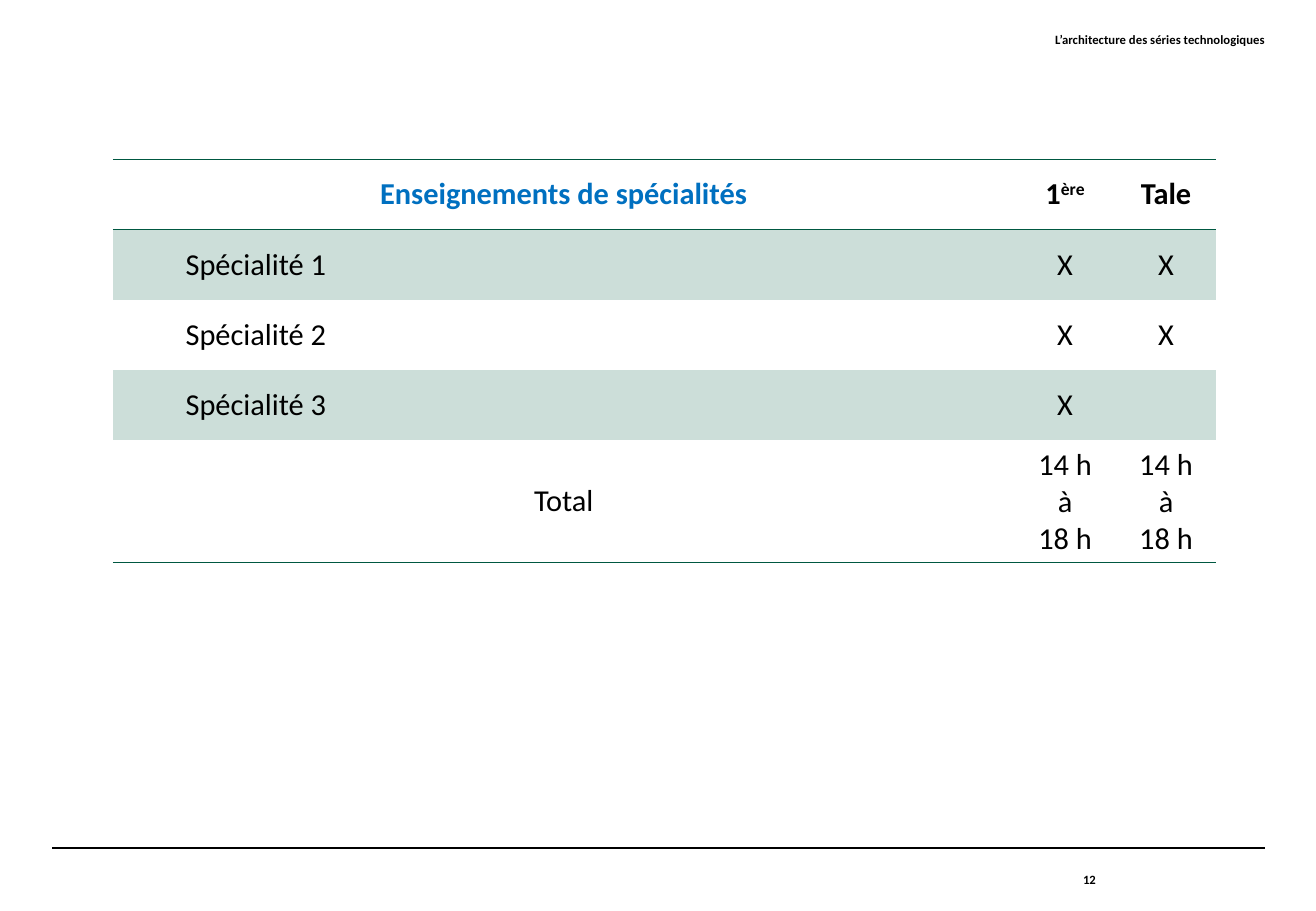
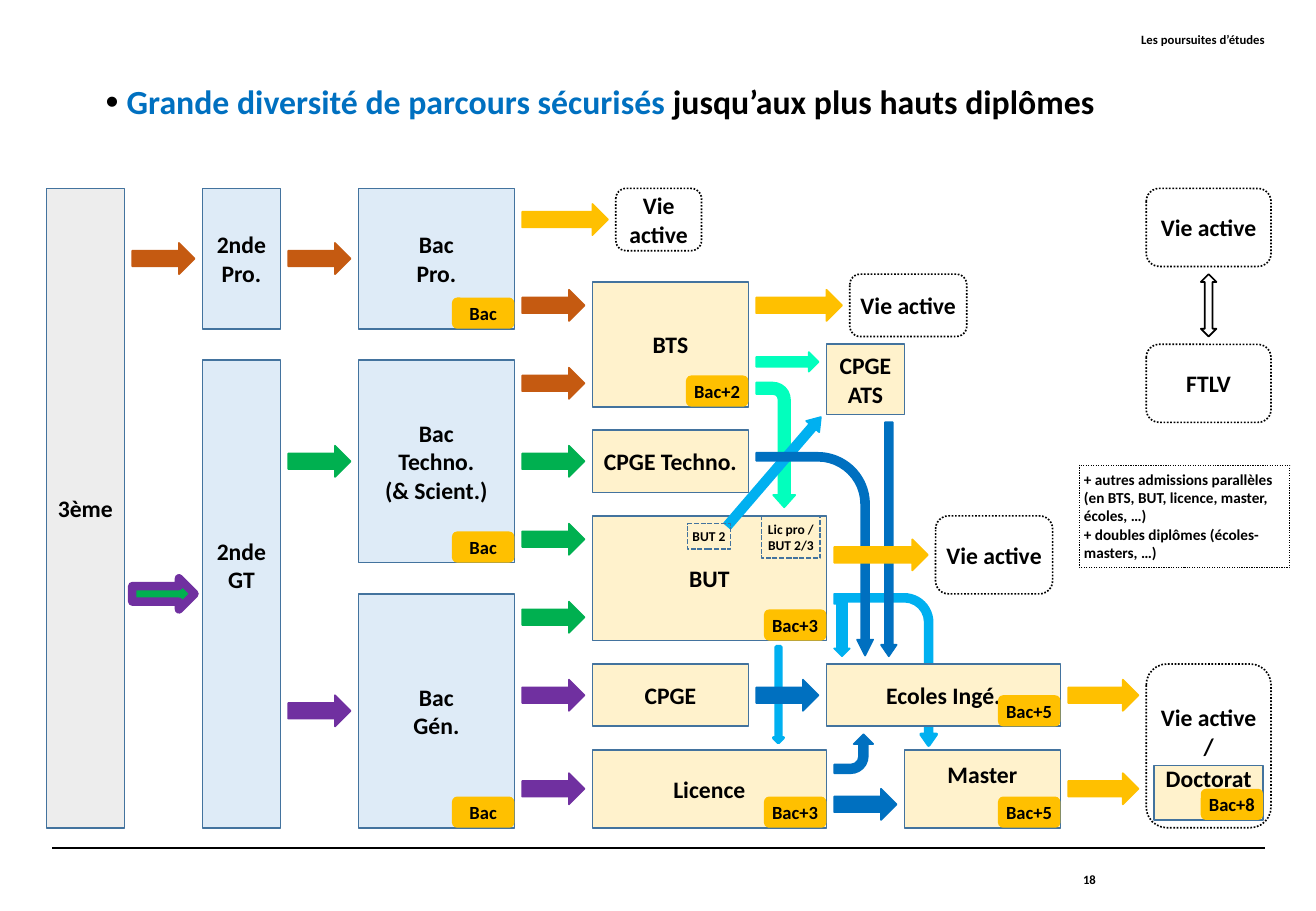
from dataclasses import dataclass

from lxml.etree import SubElement
from pptx import Presentation
from pptx.dml.color import RGBColor
from pptx.enum.dml import MSO_LINE
from pptx.enum.shapes import MSO_CONNECTOR, MSO_SHAPE
from pptx.enum.text import MSO_ANCHOR, PP_ALIGN
from pptx.oxml.ns import qn
from pptx.util import Cm, Pt

FONT = "Calibri"
COLORS = {
    "black": "000000", "white": "FFFFFF", "title": "0070C0",
    "rule": "005841", "band": "CCDED9",
    "college": "EDEDED", "lycee": "DEEBF7", "superior": "FFF2CC", "outline": "43739E",
    "pro": "C55A11", "techno": "00B050", "general": "7030A0", "work": "FFC000",
    "bts": "02FFBD", "but": "00B0F0", "prepa": "0070C0",
}
PLAIN_TABLE_STYLE = "{2D5ABB26-0587-4C30-8999-92F81FD0307C}"
INSET = 0.1
LINE_HEIGHT = 0.6
GRID_COLUMNS = 157


def rgb(name):
    return RGBColor.from_string(COLORS[name])


def style_run(run, size, color="black", bold=True):
    run.font.name, run.font.size, run.font.bold = FONT, Pt(size), bold
    run.font.color.rgb = rgb(color)


def write(frame, text, size, align=PP_ALIGN.CENTER, color="black", bold=True):
    frame.text = text
    for paragraph in frame.paragraphs:
        paragraph.alignment = align
        for run in paragraph.runs:
            style_run(run, size, color, bold)


def set_insets(frame, inset, bottom=None):
    frame.margin_left = frame.margin_right = frame.margin_top = Cm(inset)
    frame.margin_bottom = Cm(inset if bottom is None else bottom)


def add_label(slide, text, left, top, width, height, anchor):
    frame = slide.shapes.add_textbox(Cm(left), Cm(top), Cm(width), Cm(height)).text_frame
    frame.word_wrap = True
    frame.vertical_anchor = anchor
    set_insets(frame, 0)
    write(frame, text, 7.5, PP_ALIGN.RIGHT)


def add_page(prs, heading, number):
    """Add a slide with the running heading, the bottom rule and the page number."""
    slide = prs.slides.add_slide(prs.slide_layouts[6])
    rule = slide.shapes.add_connector(
        MSO_CONNECTOR.STRAIGHT, Cm(1.09), Cm(17.73), Cm(26.44), Cm(17.73))
    rule.line.color.rgb, rule.line.width = rgb("black"), Pt(0.8)
    SubElement(rule._element.spPr, qn("a:effectLst"))
    add_label(slide, heading, 9.96, 0.66, 16.48, 1.32, MSO_ANCHOR.TOP)
    add_label(slide, str(number), 18.85, 17.73, 4.06, 1.32, MSO_ANCHOR.MIDDLE)
    return slide


def add_border(cell, side):
    line = SubElement(cell._tc.get_or_add_tcPr(), qn(f"a:{side}"), w=str(Pt(1)))
    fill = SubElement(line, qn("a:solidFill"))
    SubElement(fill, qn("a:srgbClr"), val=COLORS["rule"])


def add_specialities(slide, left, top, width):
    hours = "14 h\nà\n18 h"
    rows = [
        ("Enseignements de spécialités", "1", "Tale"),
        ("Spécialité 1", "X", "X"),
        ("Spécialité 2", "X", "X"),
        ("Spécialité 3", "X", ""),
        ("Total", hours, hours),
    ]
    year_width, row_height, total_height = 2.11, 1.47, 2.55
    last = len(rows) - 1
    frame = slide.shapes.add_table(len(rows), 3, Cm(left), Cm(top), Cm(width),
                                   Cm(last * row_height + total_height))
    table = frame.table
    table.first_row = table.horz_banding = False
    table._tbl.tblPr.find(qn("a:tableStyleId")).text = PLAIN_TABLE_STYLE
    for column, size in zip(table.columns, (width - 2 * year_width, year_width, year_width)):
        column.width = Cm(size)
    for r, texts in enumerate(rows):
        table.rows[r].height = Cm(total_height if r == last else row_height)
        for c, text in enumerate(texts):
            cell = table.cell(r, c)
            speciality = c == 0 and 0 < r < last
            cell.vertical_anchor = MSO_ANCHOR.MIDDLE
            if speciality:
                cell.margin_left = Cm(1.52)
            write(cell.text_frame, text, 18,
                  PP_ALIGN.LEFT if speciality else PP_ALIGN.CENTER,
                  "title" if r == c == 0 else "black", bold=r == 0)
            if r == 0:
                add_border(cell, "lnT")
            if r in (0, last):
                add_border(cell, "lnB")
            if r % 2:
                cell.fill.solid()
                cell.fill.fore_color.rgb = rgb("band")
            else:
                cell.fill.background()
    ordinal = table.cell(0, 1).text_frame.paragraphs[0].add_run()
    ordinal.text = "ère"
    style_run(ordinal, 18)
    ordinal.font._element.set("baseline", "30000")


def add_title(slide, left, top, width, height):
    frame = slide.shapes.add_textbox(Cm(left), Cm(top), Cm(width), Cm(height)).text_frame
    frame.word_wrap = True
    paragraph = frame.paragraphs[0]
    properties = paragraph._p.get_or_add_pPr()
    properties.set("marL", str(Cm(1.43)))
    properties.set("indent", str(Cm(-0.44)))
    bullet_color = SubElement(properties, qn("a:buClr"))
    SubElement(bullet_color, qn("a:srgbClr"), val=COLORS["black"])
    SubElement(properties, qn("a:buSzPct"), val="110000")
    SubElement(properties, qn("a:buFont"), typeface="Arial")
    SubElement(properties, qn("a:buChar"), char="•")
    for text, color in (("Grande diversité de parcours sécurisés ", "title"),
                        ("jusqu’aux plus hauts diplômes", "black")):
        run = paragraph.add_run()
        run.text = text
        style_run(run, 20, color)


@dataclass
class Pathways:
    """A diagram whose parts are placed in grid units from its top left corner."""
    slide: object
    left: float
    top: float
    width: float

    def shape(self, kind, x, y, w, h, fill=None, line=None, weight=1, dash=None):
        unit = self.width / GRID_COLUMNS
        shape = self.slide.shapes.add_shape(
            kind, Cm(self.left + x * unit), Cm(self.top + y * unit), Cm(w * unit), Cm(h * unit))
        shape.shadow.inherit = False
        if fill:
            shape.fill.solid()
            shape.fill.fore_color.rgb = rgb(fill)
        else:
            shape.fill.background()
        if line:
            shape.line.color.rgb, shape.line.width = rgb(line), Pt(weight)
            if dash:
                shape.line.dash_style = dash
        else:
            shape.line.fill.background()
        return shape

    def text(self, shape, text, size=14, raised=0):
        """Centre the text; raised lifts it by that many half lines."""
        frame = shape.text_frame
        frame.word_wrap = False
        frame.vertical_anchor = MSO_ANCHOR.MIDDLE
        set_insets(frame, INSET, INSET + raised * LINE_HEIGHT)
        write(frame, text, size)

    def stage(self, text, x, y, w, h, fill="superior", badge=None, raised=0):
        """Add a level of study, with its diploma in the bottom right corner."""
        box = self.shape(MSO_SHAPE.RECTANGLE, x, y, w, h, fill, "outline")
        self.text(box, text, raised=raised)
        if badge:
            diploma = self.shape(MSO_SHAPE.ROUNDED_RECTANGLE, x + w - 8, y + h - 4, 8, 4, "work")
            self.text(diploma, badge, 11)

    def outcome(self, text, x, y, w, h, raised=0):
        box = self.shape(MSO_SHAPE.ROUNDED_RECTANGLE, x, y, w, h,
                         line="black", dash=MSO_LINE.ROUND_DOT)
        self.text(box, text, raised=raised)

    def arrow(self, color, x, y, w=8, h=4, kind=MSO_SHAPE.RIGHT_ARROW, turn=0, flip="",
              adjust=(), line=None, weight=1):
        arrow = self.shape(kind, x, y, w, h, color, line or color, weight)
        arrow.rotation = turn
        for i, value in enumerate(adjust):
            arrow.adjustments[i] = value
        for axis in flip:
            arrow._element.spPr.find(qn("a:xfrm")).set(f"flip{axis}", "1")

    def bent(self, color, x, y, w, h, turn, flip, adjust, weight=1):
        self.arrow(color, x, y, w, h, MSO_SHAPE.BENT_ARROW, turn, flip, adjust, weight=weight)

    def note(self, text, x, y, w, h, size, line, dash, wrap=False, weight=1):
        box = self.shape(MSO_SHAPE.RECTANGLE, x, y, w, h, line=line, weight=weight, dash=dash)
        frame = box.text_frame
        frame.word_wrap = wrap
        frame.vertical_anchor = MSO_ANCHOR.TOP
        set_insets(frame, INSET)
        write(frame, text, size, PP_ALIGN.LEFT if wrap else PP_ALIGN.CENTER)


def draw_arrows_behind(paths):
    paths.bent("but", 98.3, 55.6, 19.3, 12.3, 270, "HV", (0.064, 0.08, 0.114, 0.287), 2)
    paths.arrow("but", 87.7, 64.3, 12.3, 1.25, turn=90, weight=2)
    paths.bent("bts", 85.5, 30.4, 16, 5, 90, "", (0.294, 0.283, 0.316, 0.438))


def draw_stages(paths):
    paths.stage("3ème", 0, 0, 10, 82, "college")
    paths.stage("2nde\nPro.", 20, 0, 10, 18, "lycee")
    paths.stage("2nde\nGT", 20, 22, 10, 60, "lycee", raised=2)
    paths.stage("Bac\nPro.", 40, 0, 20, 18, "lycee", "Bac")
    paths.stage("Bac\nTechno.\n(& Scient.)", 40, 22, 20, 26, "lycee", "Bac")
    paths.stage("Bac\nGén.", 40, 52, 20, 30, "lycee", "Bac")
    paths.stage("BTS", 70, 12, 20, 16, badge="Bac+2")
    paths.stage("CPGE Techno.", 70, 31, 20, 8)
    paths.stage("BUT", 70, 42, 30, 16, badge="Bac+3")
    paths.stage("CPGE", 70, 61, 20, 8)
    paths.stage("Licence", 70, 72, 30, 10, badge="Bac+3")
    paths.stage("CPGE\nATS", 100, 20, 10, 9)
    paths.stage("Ecoles Ingé.", 100, 61, 30, 8, badge="Bac+5")
    paths.stage("Master", 110, 72, 20, 10, badge="Bac+5", raised=1)


def draw_arrows_in_front(paths):
    paths.arrow("but", 84.1, 35.2, 18.4, 2.2, turn=310.7, adjust=(0.5, 0.731))
    paths.arrow("techno", 11, 50, line="general", weight=5)
    for color, places in {
        "pro": [(11, 7), (31, 7), (61, 13), (61, 23)],
        "techno": [(31, 33), (61, 33), (61, 43), (61, 53)],
        "general": [(31, 65), (61, 63), (61, 75)],
        "prepa": [(91, 63), (101, 77)],
    }.items():
        for x, y in places:
            paths.arrow(color, x, y)
    paths.arrow("bts", 91, 21, h=2.5)
    paths.bent("prepa", 101, 70, 5, 5, 90, "H", (0.224, 0.25, 0.25, 0.438))
    paths.bent("but", 98, 55, 8, 2, 270, "HV", (0.644, 0.5, 0.5, 0.296))
    paths.bent("prepa", 85.5, 39.4, 26, 15, 270, "HV", (0.068, 0.069, 0.136, 0.438))
    paths.arrow("prepa", 93, 44, 30, 2, turn=90, adjust=(0.5, 0.731))
    for x, y, w in ((61, 2, 11), (91, 13, 11), (101, 45, 12), (131, 63, 9), (131, 75, 9)):
        paths.arrow("work", x, y, w)
    paths.arrow("white", 145, 14, 8, 2, MSO_SHAPE.LEFT_RIGHT_ARROW, 90, line="black")


def draw_outcomes(paths):
    paths.outcome("Vie\nactive", 73, 0, 11, 8)
    paths.outcome("Vie active", 103, 11, 15, 8)
    paths.outcome("Vie active", 114, 42, 15, 10)
    paths.outcome("Vie active", 141, 0, 16, 10)
    paths.outcome("FTLV", 141, 20, 16, 10)
    paths.outcome("Vie active\n/", 141, 61, 16, 21, raised=1)
    paths.stage("Doctorat", 142, 74, 14, 7, badge="Bac+8", raised=1)


def draw_notes(paths):
    paths.note("Lic pro /\nBUT 2/3", 91.7, 42, 7.5, 5.4, 8, "outline", MSO_LINE.SQUARE_DOT)
    paths.note("BUT 2", 82.2, 43, 5.5, 3.3, 8, "outline", MSO_LINE.SQUARE_DOT)
    paths.note("+ autres admissions parallèles (en BTS, BUT, licence, master, écoles, …)\n"
               "+ doubles diplômes (écoles-masters, …)",
               132.4, 35.5, 27, 13.1, 9, "black", MSO_LINE.ROUND_DOT, wrap=True, weight=0.75)


def main():
    prs = Presentation()
    prs.slide_width, prs.slide_height = Cm(27.51), Cm(19.05)

    architecture = add_page(prs, "L’architecture des séries technologiques", 12)
    add_specialities(architecture, 2.36, 3.33, 23.07)

    studies = add_page(prs, "Les poursuites d’études", 18)
    paths = Pathways(studies, 0.97, 3.94, 25.6)
    for draw in (draw_arrows_behind, draw_stages, draw_arrows_in_front, draw_outcomes, draw_notes):
        draw(paths)
    add_title(studies, 0.97, 1.57, 27, 2.2)
    prs.save("out.pptx")


if __name__ == "__main__":
    main()
